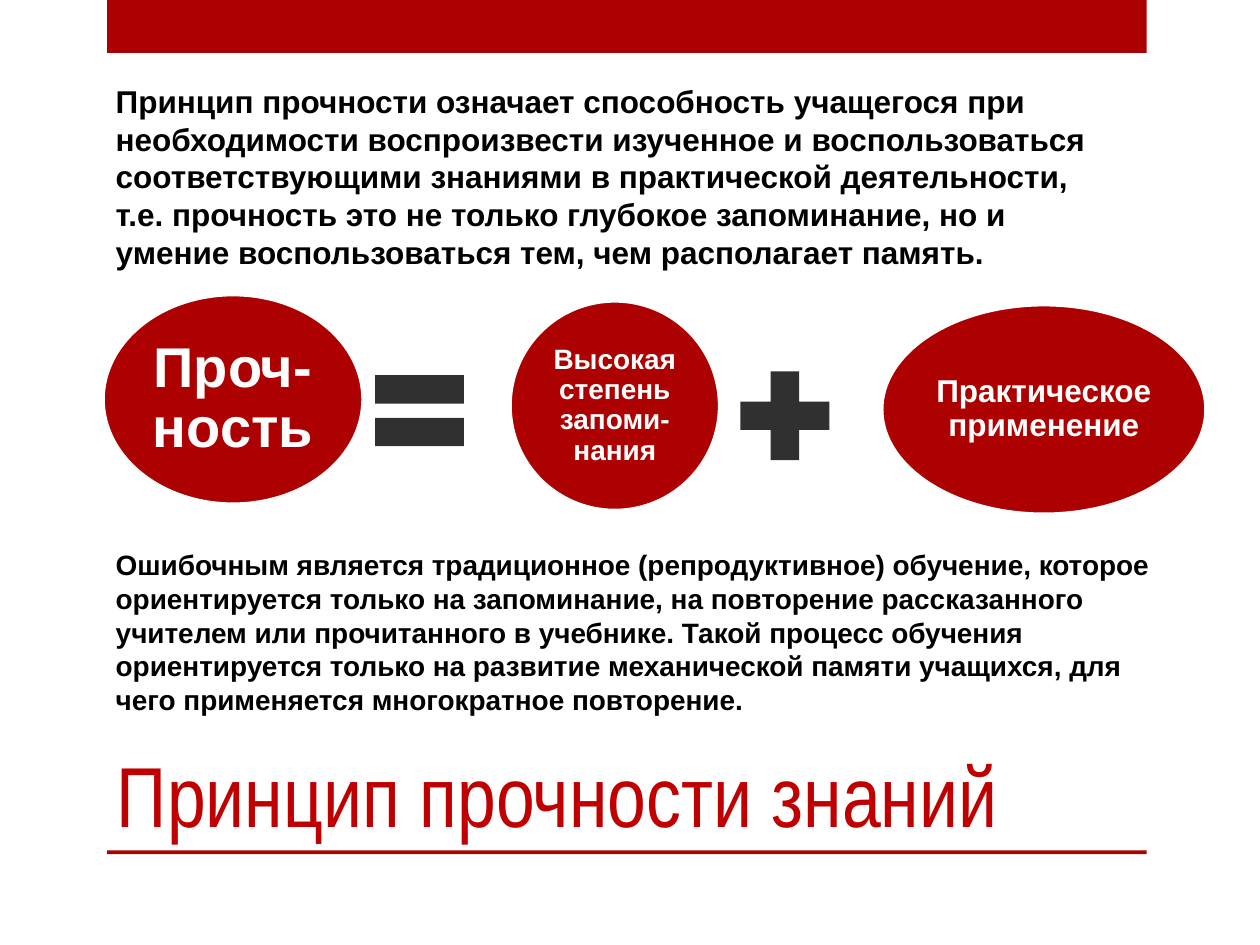
from pptx import Presentation
from pptx.dml.color import RGBColor
from pptx.enum.shapes import MSO_SHAPE as Shape
from pptx.enum.text import MSO_ANCHOR as Anchor, PP_ALIGN as Align
from pptx.util import Inches, Pt

COLORS = {"red": "AD0101", "title": "C00000", "sign": "303030",
          "white": "FFFFFF", "black": "000000"}

TITLE = "Принцип прочности знаний"
DEFINITION = (
    "Принцип прочности означает способность учащегося при необходимости "
    "воспроизвести изученное и воспользоваться соответствующими знаниями в "
    "практической деятельности, т.е. прочность это не только глубокое "
    "запоминание, но и умение воспользоваться тем, чем располагает память."
)
MISTAKE = (
    "Ошибочным является традиционное (репродуктивное) обучение, которое "
    "ориентируется только на запоминание, на повторение рассказанного учителем "
    "или прочитанного в учебнике. Такой процесс обучения ориентируется только "
    "на развитие механической памяти учащихся, для чего применяется "
    "многократное повторение."
)

BARS = [(0.85, 0, 8.25, 0.42), (0.85, 6.75, 8.25, 0.03)]

# left, top, width, text, size, inset
TERMS = [
    (0.82, 2.34, 2.06, "Проч-ность", 32, 0.04),
    (4.05, 2.39, 1.66, "Высокая степень запоми-нания", 16, 0.02),
    (7.00, 2.42, 2.57, "Практическое применение", 18, 0.03),
]
TERM_HEIGHT = 1.66

# preset, left, top
SIGNS = [(Shape.MATH_EQUAL, 2.85, 2.78), (Shape.MATH_PLUS, 5.75, 2.82)]
SIGN_SIZE = 0.96

# text, position, format
TEXTS = [
    (TITLE, (0.83, 5, 8.5, 1.75),
     dict(size=48.6, font="Arial Narrow", color="title", bold=False,
          anchor=Anchor.BOTTOM)),
    (DEFINITION, (0.82, 0.6, 8.13, 1.62), dict(size=18)),
    (MISTAKE, (0.82, 4.3, 8.52, 1.45), dict(size=16)),
]


def color_of(name):
    return RGBColor.from_string(COLORS[name])


def write(box, text, *, size, font="Arial", color="black", bold=True,
          align=Align.LEFT, anchor=Anchor.TOP, spacing=None, inset=None):
    frame = box.text_frame
    frame.word_wrap = True
    frame.vertical_anchor = anchor
    if inset is not None:
        frame.margin_left = frame.margin_right = Inches(inset)
        frame.margin_top = frame.margin_bottom = Inches(inset)
    para = frame.paragraphs[0]
    para.alignment = align
    para.line_spacing = spacing
    span = para.add_run()
    span.text = text
    span.font.name = font
    span.font.size = Pt(size)
    span.font.bold = bold
    span.font.color.rgb = color_of(color)


def add_filled(page, preset, position, fill, outline=None):
    shape = page.shapes.add_shape(preset, *map(Inches, position))
    shape.shadow.inherit = False
    shape.fill.solid()
    shape.fill.fore_color.rgb = color_of(fill)
    if outline:
        shape.line.color.rgb = color_of(outline)
        shape.line.width = Pt(1.75)
    else:
        shape.line.fill.background()
    return shape


def main():
    deck = Presentation()
    deck.slide_width, deck.slide_height = Inches(10), Inches(7.5)
    page = deck.slides.add_slide(deck.slide_layouts[6])

    for position in BARS:
        add_filled(page, Shape.RECTANGLE, position, "red")
    for left, top, width, text, size, inset in TERMS:
        oval = add_filled(page, Shape.OVAL, (left, top, width, TERM_HEIGHT),
                          "red", outline="white")
        write(oval, text, size=size, color="white", align=Align.CENTER,
              anchor=Anchor.MIDDLE, spacing=0.9, inset=inset)
    for preset, left, top in SIGNS:
        add_filled(page, preset, (left, top, SIGN_SIZE, SIGN_SIZE), "sign")
    for text, position, style in TEXTS:
        write(page.shapes.add_textbox(*map(Inches, position)), text, **style)

    deck.save("out.pptx")


if __name__ == "__main__":
    main()
